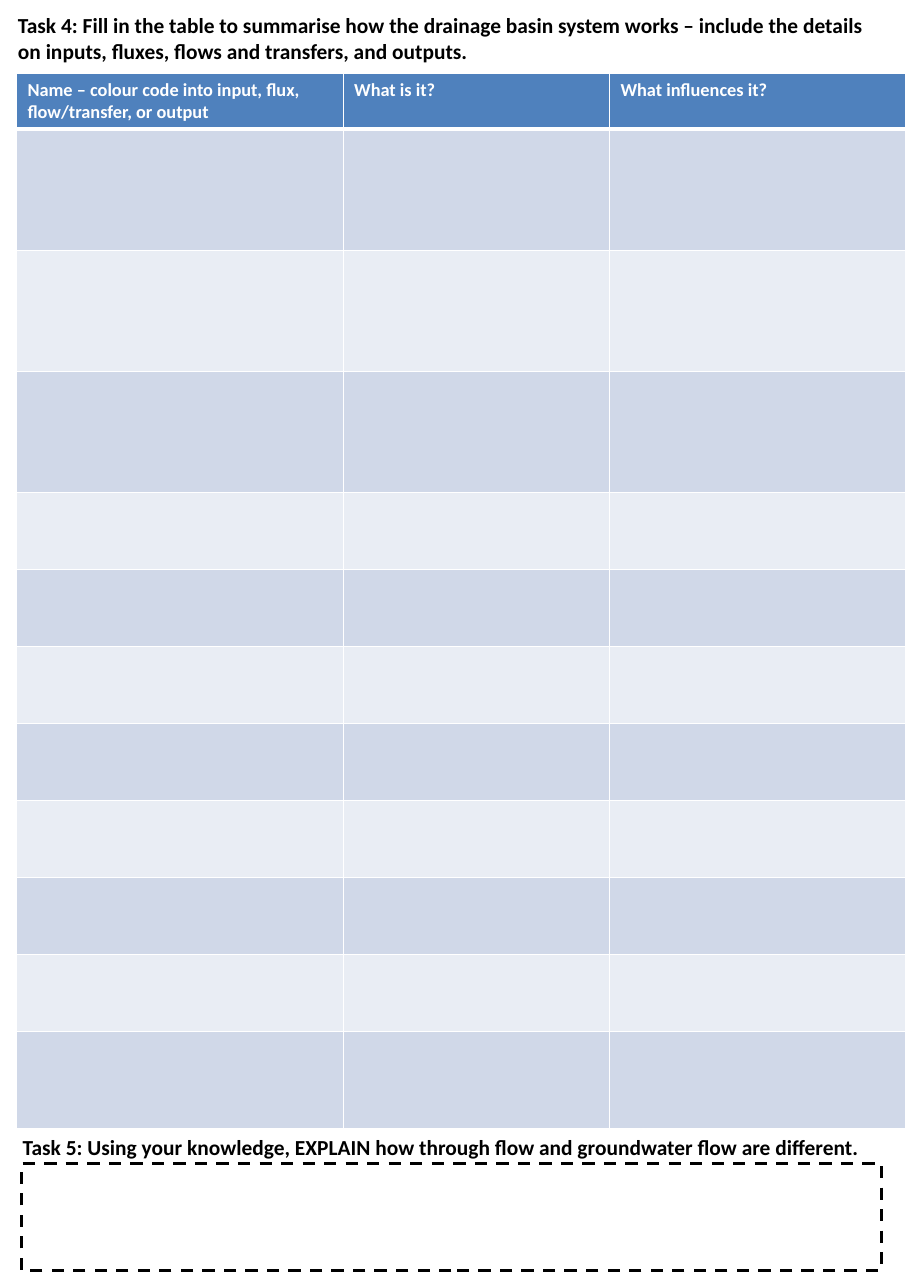
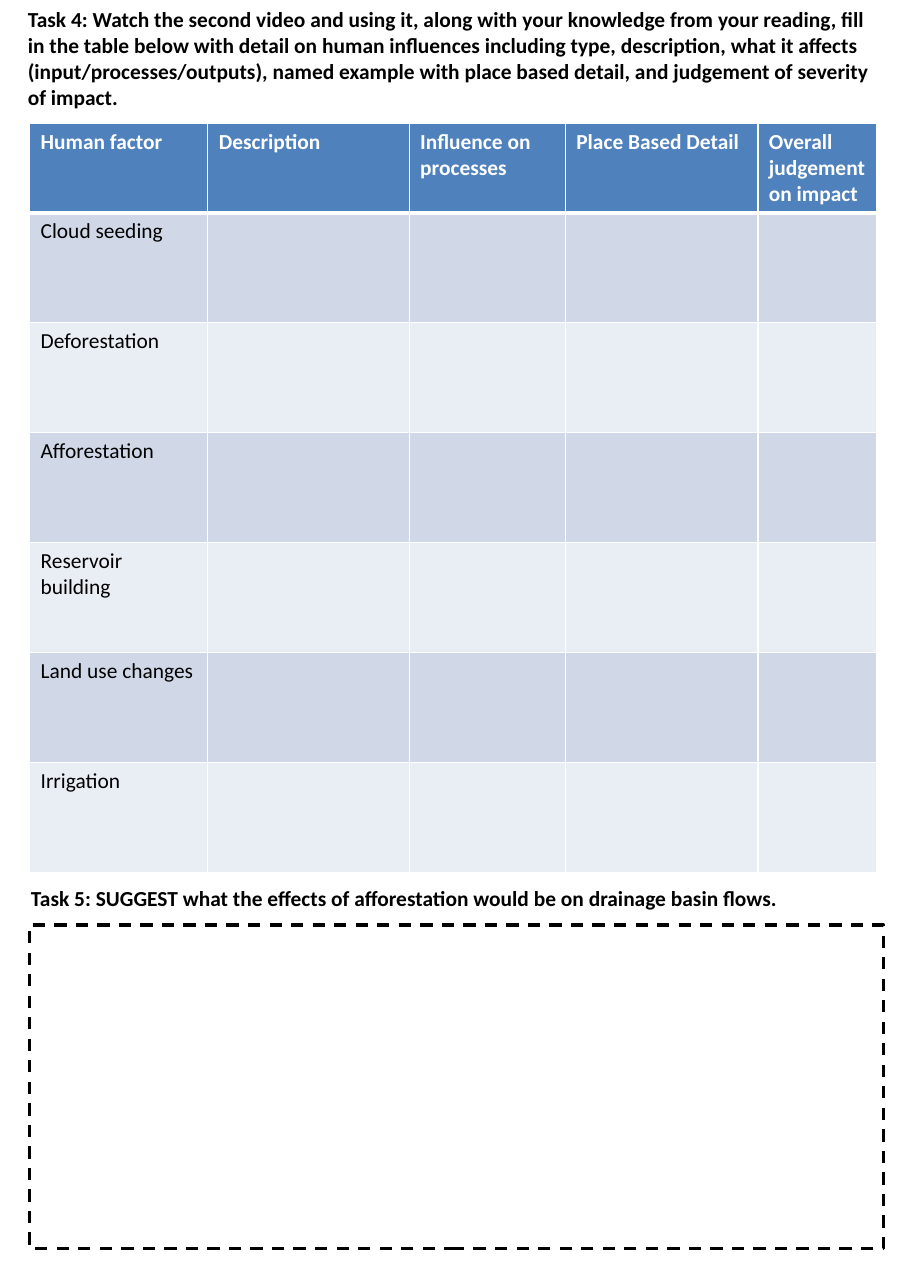
from dataclasses import dataclass

from lxml.etree import SubElement
from pptx import Presentation
from pptx.dml.color import RGBColor as Color
from pptx.enum.dml import MSO_LINE_DASH_STYLE as Dash
from pptx.enum.shapes import MSO_SHAPE as Preset
from pptx.enum.text import MSO_ANCHOR as Anchor, MSO_AUTO_SIZE as AutoSize, PP_ALIGN as Align
from pptx.oxml import parse_xml
from pptx.oxml.ns import nsdecls, qn
from pptx.util import Pt


@dataclass(frozen=True)
class Theme:
    font: str = "Calibri"
    ink: str = "000000"
    paper: str = "FFFFFF"
    header: str = "4F81BD"
    bands: tuple = ("D0D8E8", "E9EDF4")
    task_size: float = 14
    thin: float = 1
    thick: float = 3
    dash_width: float = 2


TIGHT = (0, 0.7, 0, 0)
ROOMY = (7.2, 3.6, 7.2, 3.6)


class Worksheet:
    def __init__(self, theme):
        self.theme = theme
        self.deck = Presentation()
        self.deck.slide_width, self.deck.slide_height = Pt(596.16), Pt(843.12)
        self.page = None

    def add_page(self):
        self.page = self.deck.slides.add_slide(self.deck.slide_layouts[5])

    def style(self, para, size, color, bold):
        for span in para.runs:
            span.font.name = self.theme.font
            span.font.size = Pt(size)
            span.font.bold = bold
            span.font.color.rgb = Color.from_string(color)

    def write_task(self, box, text, area, insets):
        box.left, box.top, box.width, box.height = map(Pt, area)
        frame = box.text_frame
        frame.text = text
        frame.word_wrap = True
        frame.auto_size = AutoSize.NONE
        frame.vertical_anchor = Anchor.TOP
        (frame.margin_left, frame.margin_top,
         frame.margin_right, frame.margin_bottom) = map(Pt, insets)
        para = frame.paragraphs[0]
        para.alignment = Align.LEFT
        para.space_before = Pt(1)
        para._p.get_or_add_pPr().set("marL", str(Pt(0.9)))
        self.style(para, self.theme.task_size, self.theme.ink, True)

    def title(self, text, area, insets):
        self.write_task(self.page.shapes.title, text, area, insets)

    def task(self, text, area):
        box = self.page.shapes.add_textbox(*map(Pt, area))
        self.write_task(box, text, area, TIGHT)

    def answer_box(self, area):
        box = self.page.shapes.add_shape(Preset.RECTANGLE, *map(Pt, area))
        box.shadow.inherit = False
        box.fill.solid()
        box.fill.fore_color.rgb = Color.from_string(self.theme.paper)
        box.line.color.rgb = Color.from_string(self.theme.ink)
        box.line.width = Pt(self.theme.dash_width)
        box.line.dash_style = Dash.DASH

    def border(self, cell, top, bottom):
        properties = cell._tc.get_or_add_tcPr()
        widths = {"lnL": self.theme.thin, "lnR": self.theme.thin, "lnT": top, "lnB": bottom}
        for index, (side, width) in enumerate(widths.items()):
            line = parse_xml(f'<a:{side} {nsdecls("a")} w="{Pt(width)}"/>')
            fill = SubElement(line, qn("a:solidFill"))
            SubElement(fill, qn("a:srgbClr"), val=self.theme.paper)
            properties.insert(index, line)

    def table(self, origin, widths, heights, headings, names=(), heading_size=14):
        theme = self.theme
        table = self.page.shapes.add_table(
            len(heights), len(widths), *map(Pt, (*origin, sum(widths), sum(heights)))).table
        for column, width in zip(table.columns, widths):
            column.width = Pt(width)
        for row, height in zip(table.rows, heights):
            row.height = Pt(height)
        texts = {(0, column): text for column, text in enumerate(headings)}
        texts.update({(row, 0): text for row, text in enumerate(names, 1)})
        for row in range(len(heights)):
            is_header = row == 0
            fill = theme.header if is_header else theme.bands[(row - 1) % 2]
            for column in range(len(widths)):
                cell = table.cell(row, column)
                cell.fill.solid()
                cell.fill.fore_color.rgb = Color.from_string(fill)
                self.border(cell, theme.thick if row == 1 else theme.thin,
                            theme.thick if is_header else theme.thin)
                if (row, column) in texts:
                    cell.text_frame.text = texts[row, column]
                    self.style(cell.text_frame.paragraphs[0],
                               heading_size if is_header else theme.task_size,
                               theme.paper if is_header else theme.ink, is_header)


def drainage_basin_page(sheet):
    sheet.add_page()
    sheet.title("Task 4: Fill in the table to summarise how the drainage basin system works – "
                "include the details on inputs, fluxes, flows and transfers, and outputs.",
                (10.8, 7.2, 563, 35.3), TIGHT)
    sheet.table((10.8, 48.2), (213.8, 174.3, 193.7),
                [35.8] + [79.2] * 3 + [50.4] * 7 + [64],
                ("Name – colour code into input, flux, flow/transfer, or output",
                 "What is it?", "What influences it?"), heading_size=12)
    sheet.task("Task 5: Using your knowledge, EXPLAIN how through flow and groundwater flow "
               "are different.", (13.9, 741.6, 563, 18))
    sheet.answer_box((13.9, 761.8, 563, 69.8))


def human_influence_page(sheet):
    sheet.add_page()
    sheet.title("Task 4: Watch the second video and using it, along with your knowledge from your "
                "reading, fill in the table below with detail on human influences including type, "
                "description, what it affects (input/processes/outputs), named example with place "
                "based detail, and judgement of severity of impact.",
                (10.1, 0.7, 576, 74.9), ROOMY)
    sheet.table((19.4, 80.8), (116.6, 131.8, 102.2, 126, 77.8), [57.6] + [72] * 6,
                ("Human factor", "Description", "Influence on processes",
                 "Place Based Detail", "Overall judgement on impact"),
                ("Cloud seeding", "Deforestation", "Afforestation",
                 "Reservoir building", "Land use changes", "Irrigation"))
    sheet.task("Task 5: SUGGEST what the effects of afforestation would be on drainage basin "
               "flows.", (19.4, 578.9, 558.7, 18))
    sheet.answer_box((19.4, 605.5, 558.7, 211.7))


def main():
    sheet = Worksheet(Theme())
    drainage_basin_page(sheet)
    human_influence_page(sheet)
    sheet.deck.save("out.pptx")


if __name__ == "__main__":
    main()
